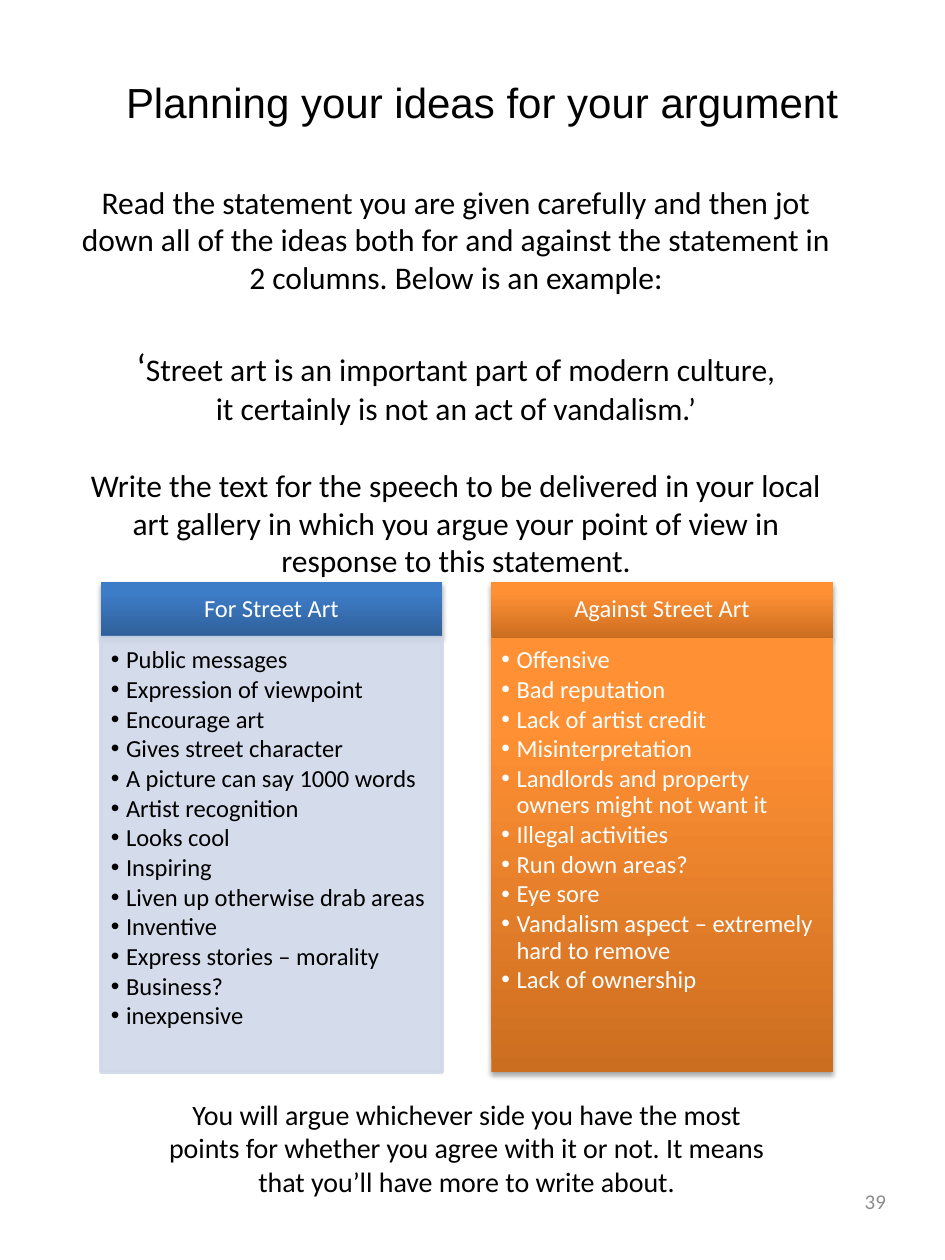
"""Build a worksheet page for planning a speech about street art."""
from lxml.etree import SubElement
from pptx import Presentation
from pptx.dml.color import RGBColor
from pptx.enum.text import MSO_ANCHOR, MSO_AUTO_SIZE, PP_ALIGN
from pptx.oxml.ns import qn
from pptx.util import Inches, Pt

BLACK = RGBColor(0x00, 0x00, 0x00)
WHITE = RGBColor(0xFF, 0xFF, 0xFF)
GREY = RGBColor(0x8C, 0x8C, 0x8C)
PALE_BLUE = RGBColor(0xD0, 0xD8, 0xE8)
DARK_BLUE = RGBColor(0x2F, 0x5F, 0x99)
BLUE = RGBColor(0x3D, 0x7C, 0xC7)
DARK_ORANGE = RGBColor(0xCC, 0x6E, 0x20)
ORANGE = RGBColor(0xFF, 0x90, 0x34)


def write(shape, lines, size=18, font="Calibri", color=BLACK, align=PP_ALIGN.CENTER,
          anchor=MSO_ANCHOR.TOP, margins=(0.1, 0.05, 0.1, 0.05), spacing=1.0,
          after=0, gaps=(), hanging=0):
    frame = shape.text_frame
    frame.word_wrap = True
    frame.auto_size = MSO_AUTO_SIZE.NONE
    frame.vertical_anchor = anchor
    (frame.margin_left, frame.margin_top,
     frame.margin_right, frame.margin_bottom) = map(Inches, margins)
    frame.text = "\n".join(lines)
    for index, paragraph in enumerate(frame.paragraphs):
        paragraph.alignment = align
        paragraph.line_spacing = spacing
        paragraph.space_before = Pt(gaps[index] if gaps else 0)
        paragraph.space_after = Pt(after)
        if hanging:
            properties = paragraph._p.get_or_add_pPr()
            properties.set("marL", str(Inches(hanging)))
            properties.set("indent", str(-Inches(hanging)))
        for run in paragraph.runs:
            run.font.name = font
            run.font.size = Pt(size)
            run.font.bold = False
            run.font.color.rgb = color


def shade(shape, dark, light):
    shape.fill.gradient()
    shape.fill.gradient_angle = 90
    for stop, color, position in zip(shape.fill.gradient_stops, (dark, light), (0, 0.8)):
        stop.color.rgb = color
        stop.position = position
    shape.shadow.inherit = False
    effects = shape._element.spPr.find(qn("a:effectLst"))
    shadow = SubElement(effects, qn("a:outerShdw"), blurRad=str(Pt(3.1)),
                        dist=str(Pt(1.8)), dir="5400000", rotWithShape="0")
    black = SubElement(shadow, qn("a:srgbClr"), val="000000")
    SubElement(black, qn("a:alpha"), val="35000")


presentation = Presentation()
presentation.slide_width = Inches(7.5)
presentation.slide_height = Inches(10)
slide = presentation.slides.add_slide(presentation.slide_layouts.get_by_name("Comparison"))
title, for_heading, for_ideas, against_heading, against_ideas = slide.placeholders
advice, task, page_number = [
    slide.shapes.add_textbox(0, 0, 0, 0) for _ in range(3)]

places = [
    (title, 0.9, 0.56, 6.6, 0.5),
    (task, 0.53, 1.4, 6.18, 3.26),
    (advice, 1.17, 8.66, 5.07, 0.91),
    (page_number, 5.38, 9.27, 1.75, 0.53),
]
for left, heading, ideas in ((0.8, for_heading, for_ideas),
                             (3.9, against_heading, against_ideas)):
    places += [(heading, left, 4.62, 2.71, 0.44), (ideas, left, 5.06, 2.71, 3.45)]
for shape, *box in places:
    shape.left, shape.top, shape.width, shape.height = map(Inches, box)

write(title, ["Planning your ideas for your argument"], size=24, font="Arial",
      align=PP_ALIGN.LEFT)
write(task, [
    "Read the statement you are given carefully and then jot down all of the ideas "
    "both for and against the statement in 2 columns. Below is an example:",
    "‘Street art is an important part of modern culture,",
    "it certainly is not an act of vandalism.’",
    "Write the text for the speech to be delivered in your local art gallery in which "
    "you argue your point of view in response to this statement.",
], gaps=(0, 27, 0, 22))
task.text_frame.paragraphs[1].runs[0].text = "‘"
statement = task.text_frame.paragraphs[1].add_run()
statement.text = "Street art is an important part of modern culture,"
statement.font.name = "Calibri"
statement.font.size = Pt(18)
statement.font.color.rgb = BLACK
task.text_frame.paragraphs[1].runs[0].font.size = Pt(22)
write(advice, [
    "You will argue whichever side you have the most points for whether you agree with "
    "it or not. It means that you’ll have more to write about."], size=16)
write(page_number, ["39"], size=12, color=GREY, align=PP_ALIGN.RIGHT,
      anchor=MSO_ANCHOR.MIDDLE)

for heading, label in ((for_heading, "For Street Art"),
                       (against_heading, "Against Street Art")):
    write(heading, [label], size=14, color=WHITE, anchor=MSO_ANCHOR.MIDDLE,
          margins=(0.11, 0.06, 0.11, 0.06), spacing=0.9)

for ideas, color, points in (
    (for_ideas, BLACK, [
        "Public messages", "Expression of viewpoint", "Encourage art",
        "Gives street character", "A picture can say 1000 words", "Artist recognition",
        "Looks cool", "Inspiring", "Liven up otherwise drab areas", "Inventive",
        "Express stories – morality", "Business?", "inexpensive"]),
    (against_ideas, WHITE, [
        "Offensive", "Bad reputation", "Lack of artist credit", "Misinterpretation",
        "Landlords and property owners might not want it", "Illegal activities",
        "Run down areas?", "Eye sore", "Vandalism aspect – extremely hard to remove",
        "Lack of ownership"]),
):
    write(ideas, points, size=14, color=color, align=PP_ALIGN.LEFT,
          margins=(0.08, 0.08, 0.11, 0.12), spacing=0.9, after=1.8, hanging=0.12)

shade(for_heading, DARK_BLUE, BLUE)
shade(against_heading, DARK_ORANGE, ORANGE)
shade(against_ideas, DARK_ORANGE, ORANGE)
for_ideas.fill.solid()
for_ideas.fill.fore_color.rgb = PALE_BLUE
for_ideas.line.color.rgb = PALE_BLUE
for_ideas.line.width = Pt(2)
for tint in for_ideas._element.spPr.iter(qn("a:srgbClr")):
    SubElement(tint, qn("a:alpha"), val="90000")

presentation.save("out.pptx")
